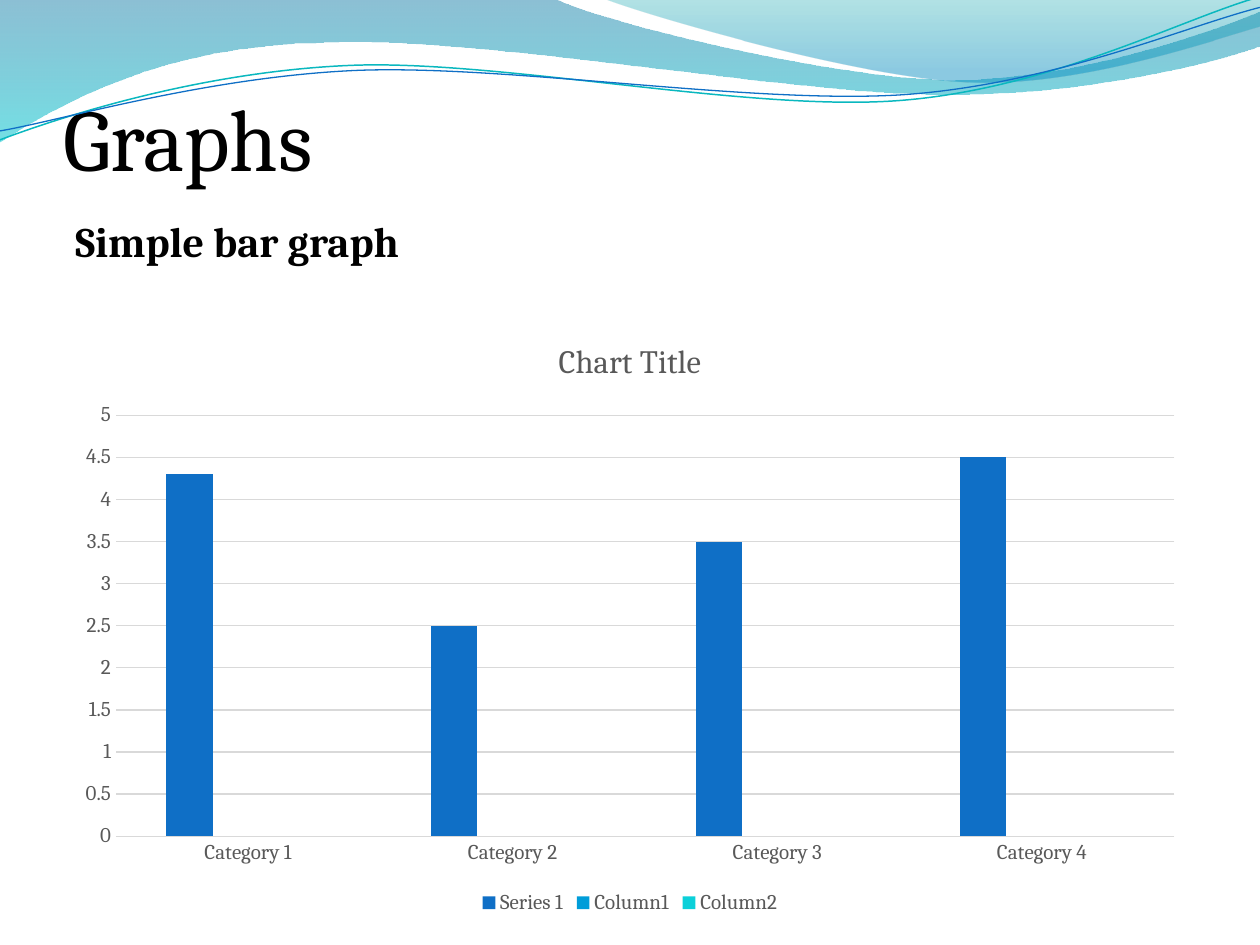
from dataclasses import dataclass
from typing import Optional

import lxml.etree
import pptx
import pptx.chart.data
import pptx.dml.color
import pptx.enum.chart
import pptx.enum.text
import pptx.oxml.ns
import pptx.util

Cm = pptx.util.Cm
Pt = pptx.util.Pt
qn = pptx.oxml.ns.qn
FONT = "Cambria"
COLORS = {
    "text": "000000", "chart_text": "595959", "grid": "D9D9D9",
    "deep_blue": "0074A1", "cyan": "00C6CF", "teal": "00A1A9",
    "sky": "008BBF", "teal_line": "0AB8BF", "blue": "0F6FC6",
    "light_blue": "009DD9", "turquoise": "0BD0D9",
}


@dataclass
class GradientStop:
    position: float
    color: str
    opacity: int


@dataclass
class Wave:
    start: tuple
    segments: list
    stops: tuple = ()
    line_color: Optional[str] = None
    line_width: float = 0


@dataclass
class Series:
    name: str
    values: tuple
    color: str


WAVES = [
    Wave((0, -0.03), [
        [(11.18, -0.03)],
        [(12.09, 0.43), (16.87, 1.6), (19.25, 1.6)],
        [(21.67, 1.6), (24.33, 0.66), (25.4, 0.23)],
        [(25.43, 0.91)],
        [(24.97, 1.12), (22.1, 1.93), (18.95, 1.9)],
        [(15.8, 1.9), (9.7, 0.71), (6.53, 0.86)],
        [(3.28, 0.89), (1.17, 2.11), (-0.03, 2.87)],
        [(0, -0.03)],
    ], stops=(GradientStop(0, "deep_blue", 45), GradientStop(1, "cyan", 55))),
    Wave((12.17, -0.03), [
        [(12.93, 0.28), (17.32, 1.57), (19.53, 1.65)],
        [(21.74, 1.75), (24.41, 0.81), (25.4, 0.53)],
        [(25.4, 0)],
        [(12.17, -0.03)],
    ], stops=(GradientStop(0, "teal", 30), GradientStop(0.8, "sky", 45))),
    Wave((0, 2.82), [
        [(1.22, 2.36), (4.01, 1.45), (7.04, 1.32)],
        [(10.03, 1.19), (15.06, 2.26), (18.11, 2.03)],
        [(21.16, 1.8), (23.83, 0.38), (25.35, -0.05)],
    ], line_color="teal_line", line_width=0.85),
    Wave((0, 2.64), [
        [(1.19, 2.44), (4.17, 1.55), (7.19, 1.42)],
        [(10.24, 1.3), (15.16, 2.11), (18.21, 1.91)],
        [(21.23, 1.7), (23.9, 0.53), (25.4, 0.15)],
    ], line_color="blue", line_width=0.75),
]
CATEGORIES = [f"Category {number}" for number in range(1, 5)]
SERIES = [
    Series("Series 1", (4.3, 2.5, 3.5, 4.5), "blue"),
    Series("Column1", (None,) * 4, "light_blue"),
    Series("Column2", (None,) * 4, "turquoise"),
]


def rgb(name: str) -> pptx.dml.color.RGBColor:
    return pptx.dml.color.RGBColor.from_string(COLORS[name])


def set_font(font, size: float, color: str, bold: bool = False) -> None:
    font.name = FONT
    font.size = Pt(size)
    font.bold = bold
    font.color.rgb = rgb(color)


def bend_segments(shape, segments: list) -> None:
    lines = iter(list(shape.element.spPr.iter(qn("a:lnTo"))))
    for segment in segments:
        group = [next(lines) for _ in segment]
        if len(group) == 1:
            continue
        curve = lxml.etree.Element(qn("a:cubicBezTo"))
        group[0].addprevious(curve)
        for line in group:
            curve.append(line[0])
            line.getparent().remove(line)


def apply_gradient(shape, stops: tuple) -> None:
    shape.fill.gradient()
    shape.fill.gradient_angle = 270
    for target, stop in zip(shape.fill.gradient_stops, stops):
        target.position = stop.position
        target.color.rgb = rgb(stop.color)
    for element, stop in zip(shape.element.spPr.iter(qn("a:srgbClr")), stops):
        alpha = lxml.etree.SubElement(element, qn("a:alpha"))
        alpha.set("val", str(stop.opacity * 1000))


def draw_wave(slide, wave: Wave) -> None:
    points = [wave.start] + [point for segment in wave.segments for point in segment]
    vertices = [(Cm(x), Cm(y)) for x, y in points]
    builder = slide.shapes.build_freeform(*vertices[0], scale=1.0)
    builder.add_line_segments(vertices[1:], close=bool(wave.stops))
    shape = builder.convert_to_shape()
    bend_segments(shape, wave.segments)
    shape.shadow.inherit = False
    if wave.stops:
        apply_gradient(shape, wave.stops)
        shape.line.fill.background()
    else:
        shape.fill.background()
        shape.line.color.rgb = rgb(wave.line_color)
        shape.line.width = Pt(wave.line_width)


def write_title(slide) -> None:
    title = slide.shapes.title
    title.left, title.top, title.width, title.height = Cm(1.27), Cm(1.96), Cm(22.86), Cm(1.85)
    frame = title.text_frame
    frame.margin_left = frame.margin_right = frame.margin_bottom = 0
    frame.margin_top = Cm(0.13)
    frame.vertical_anchor = pptx.enum.text.MSO_ANCHOR.BOTTOM
    frame.auto_size = pptx.enum.text.MSO_AUTO_SIZE.NONE
    frame.text = "Graphs"
    paragraph = frame.paragraphs[0]
    paragraph.alignment = pptx.enum.text.PP_ALIGN.LEFT
    set_font(paragraph.font, 50, "text")


def write_subtitle(slide) -> None:
    box = slide.shapes.add_textbox(Cm(1.27), Cm(4.22), Cm(7.34), Cm(1.27))
    frame = box.text_frame
    frame.word_wrap = False
    frame.auto_size = pptx.enum.text.MSO_AUTO_SIZE.SHAPE_TO_FIT_TEXT
    frame.text = "Simple bar graph"
    set_font(frame.paragraphs[0].font, 24, "text", bold=True)


def draw_chart(slide) -> None:
    data = pptx.chart.data.CategoryChartData()
    data.categories = CATEGORIES
    for series in SERIES:
        data.add_series(series.name, series.values)
    chart = slide.shapes.add_chart(
        pptx.enum.chart.XL_CHART_TYPE.COLUMN_CLUSTERED,
        Cm(1.27), Cm(6.35), Cm(22.86), Cm(12.19), data).chart
    set_font(chart.font, 10, "text")

    chart.has_title = True
    chart.chart_title.include_in_layout = False
    title_frame = chart.chart_title.text_frame
    title_frame.text = "Chart Title"
    set_font(title_frame.paragraphs[0].font, 18.6, "chart_text")

    chart.has_legend = True
    chart.legend.position = pptx.enum.chart.XL_LEGEND_POSITION.BOTTOM
    chart.legend.include_in_layout = False
    set_font(chart.legend.font, 12, "chart_text")

    plot = chart.plots[0]
    plot.gap_width = 219
    plot.overlap = -27
    plot.vary_by_categories = False
    for drawn, series in zip(plot.series, SERIES):
        drawn.format.fill.solid()
        drawn.format.fill.fore_color.rgb = rgb(series.color)

    for axis in (chart.category_axis, chart.value_axis):
        axis.major_tick_mark = axis.minor_tick_mark = pptx.enum.chart.XL_TICK_MARK.NONE
        set_font(axis.tick_labels.font, 12, "chart_text")
    chart.value_axis.format.line.fill.background()
    chart.value_axis.has_major_gridlines = True
    for lined in (chart.category_axis, chart.value_axis.major_gridlines):
        lined.format.line.color.rgb = rgb("grid")
        lined.format.line.width = Pt(0.75)


def main() -> None:
    presentation = pptx.Presentation()
    presentation.slide_width, presentation.slide_height = Cm(25.4), Cm(19.05)
    slide = presentation.slides.add_slide(presentation.slide_layouts.get_by_name("Title Only"))
    for wave in WAVES:
        draw_wave(slide, wave)
    write_title(slide)
    draw_chart(slide)
    write_subtitle(slide)
    presentation.save("out.pptx")


if __name__ == "__main__":
    main()
